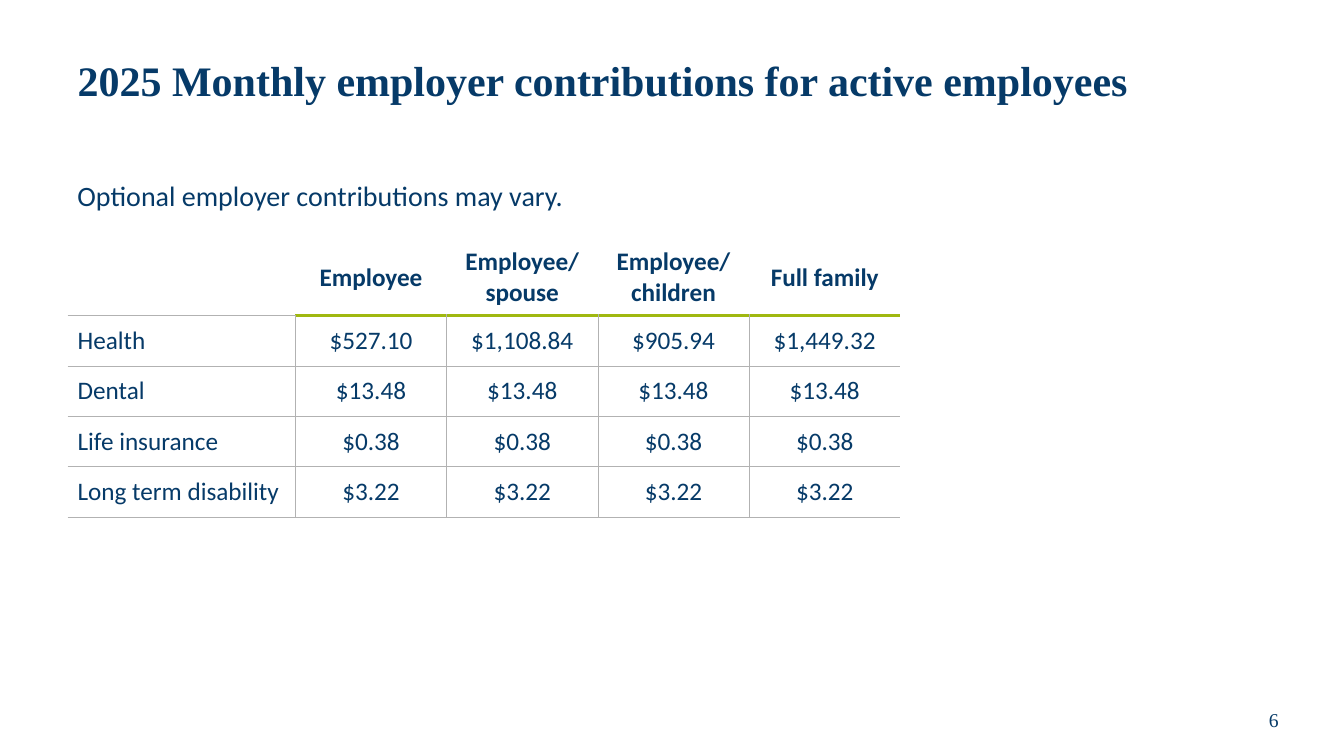
from lxml import etree
from pptx import Presentation
from pptx import util as u
from pptx.dml.color import RGBColor
from pptx.enum import text
from pptx.oxml import ns

NAVY, GREY, LIME = "063A68", "B2B2B2", "A0B810"
SERIF, SANS = "Times New Roman", "Calibri"
LEFT, WIDTH = 0.67, 12
LABEL_WIDTH, VALUE_WIDTH = 2.26, 1.5
HEADER_HEIGHT, ROW_HEIGHT = 0.75, 0.5
RATES = [
    ["", "Employee", "Employee/\nspouse", "Employee/\nchildren", "Full family"],
    ["Health", "$527.10", "$1,108.84", "$905.94", "$1,449.32"],
    ["Dental"] + ["$13.48"] * 4,
    ["Life insurance"] + ["$0.38"] * 4,
    ["Long term disability"] + ["$3.22"] * 4,
]


def color(value):
    return RGBColor.from_string(value)


def write(frame, words, size, font=SANS, bold=False, align=text.PP_ALIGN.LEFT):
    """Put one formatted paragraph in a text frame."""
    frame.word_wrap = True
    para = frame.paragraphs[0]
    para.text = words
    para.alignment = align
    for style in [para.font] + [span.font for span in para.runs]:
        style.size, style.name, style.bold = u.Pt(size), font, bold
        style.color.rgb = color(value=NAVY)
    return para


def set_borders(cell, **sides):
    """Draw the given sides (L, R, T, B) as (colour, points); hide the others."""
    props = cell._tc.get_or_add_tcPr()
    for place, side in enumerate("LRTB"):
        line = etree.Element(ns.qn(f"a:ln{side}"))
        if sides.get(side):
            hue, points = sides[side]
            line.set("w", str(u.Pt(points)))
            fill = etree.SubElement(line, ns.qn("a:solidFill"))
            etree.SubElement(fill, ns.qn("a:srgbClr"), val=hue)
        else:
            etree.SubElement(line, ns.qn("a:noFill"))
        props.insert(place, line)


def add_title(page, box, words):
    title = page.shapes.title
    title.left, title.top, title.width, title.height = map(u.Inches, box)
    title.text_frame.vertical_anchor = text.MSO_ANCHOR.MIDDLE
    write(title.text_frame, words, 30, SERIF, bold=True).line_spacing = 0.9


def add_note(page, box, words):
    note = page.shapes.add_textbox(*map(u.Inches, box))
    write(note.text_frame, words, 20).line_spacing = 0.9


def add_page_number(page, box, number):
    frame = page.shapes.add_textbox(*map(u.Inches, box)).text_frame
    frame.vertical_anchor = text.MSO_ANCHOR.MIDDLE
    write(frame, number, 14, SERIF, align=text.PP_ALIGN.CENTER)


def add_rates(page, left, top):
    """Table with a lime rule under the headings and thin grey inner lines."""
    rows, columns = len(RATES), len(RATES[0])
    width = LABEL_WIDTH + (columns - 1) * VALUE_WIDTH
    height = HEADER_HEIGHT + (rows - 1) * ROW_HEIGHT
    table = page.shapes.add_table(
        rows, columns, *map(u.Inches, (left, top, width, height))).table
    table.first_row = table.horz_banding = False
    for c, column in enumerate(table.columns):
        column.width = u.Inches(VALUE_WIDTH if c else LABEL_WIDTH)
    for r, row in enumerate(table.rows):
        row.height = u.Inches(ROW_HEIGHT if r else HEADER_HEIGHT)

    thin, thick = (GREY, 0.5), (LIME, 2.25)
    for r, values in enumerate(RATES):
        for c, value in enumerate(values):
            cell = table.cell(r, c)
            cell.fill.background()
            cell.vertical_anchor = text.MSO_ANCHOR.MIDDLE
            align = text.PP_ALIGN.CENTER if c else text.PP_ALIGN.LEFT
            write(cell.text_frame, value, 18, bold=r == 0, align=align)
            rule = thick if c else thin
            set_borders(
                cell,
                L=thin if r and c else None,
                R=thin if r and c < columns - 1 else None,
                T=(rule if r == 1 else thin) if r else None,
                B=thin if r else rule)


def build_contributions(deck):
    page = deck.slides.add_slide(deck.slide_layouts[5])
    add_page_number(page, (12.05, 6.89, 1.17, 0.5), "6")
    add_note(page, (LEFT, 1.76, WIDTH, 5.13),
             "Optional employer contributions may vary.")
    add_title(page, (LEFT, 0.25, WIDTH, 1.15),
              "2025 Monthly employer contributions for active employees")
    add_rates(page, LEFT, 2.38)


def main():
    deck = Presentation()
    deck.slide_width, deck.slide_height = u.Inches(13.33), u.Inches(7.5)
    build_contributions(deck)
    deck.save("out.pptx")


if __name__ == "__main__":
    main()
